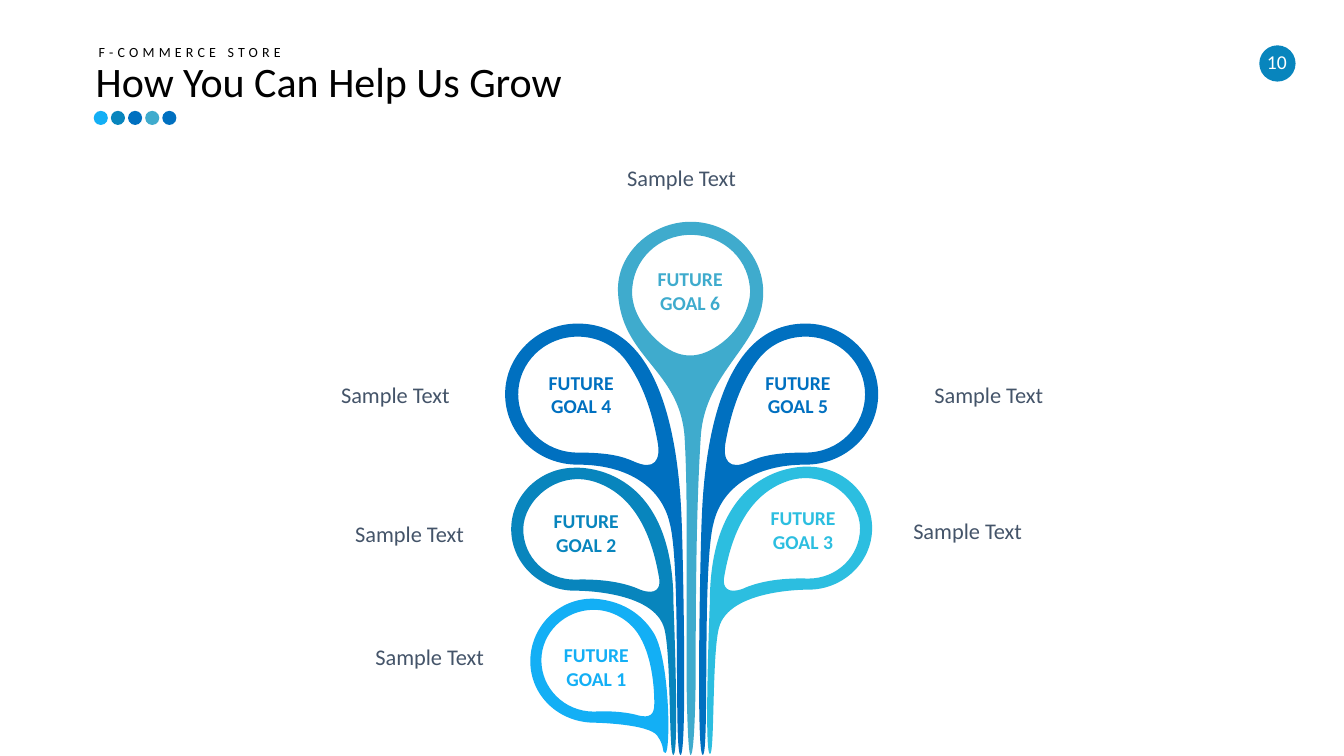
from lxml import etree
from pptx import Presentation
from pptx.dml.color import RGBColor
from pptx.enum.shapes import MSO_SHAPE as SHAPE
from pptx.enum.text import MSO_AUTO_SIZE as AUTO_SIZE, PP_ALIGN as ALIGN
from pptx.oxml.ns import qn
from pptx.util import Inches, Pt

FONT = "Calibri"
SKY = RGBColor(0x13, 0xAF, 0xF5)
TEAL = RGBColor(0x08, 0x85, 0xBD)
BLUE = RGBColor(0x00, 0x70, 0xC0)
MIST = RGBColor(0x3F, 0xAB, 0xCD)
AQUA = RGBColor(0x2C, 0xBE, 0xE0)
SLATE = RGBColor(0x44, 0x54, 0x69)
BLACK = RGBColor(0, 0, 0)
WHITE = RGBColor(0xFF, 0xFF, 0xFF)

TREE_WIDTH = 3.72

# Each leaf is a rim and a hole, in inches inside the tree box:
# a start point, then Bezier curves (two controls and an end point)
TOP_LEAF = [
    [(1.85, .2),
     (1.46, .2, 1.11, .52, 1.13, .9), (1.16, 1.55, 1.74, 1.66, 1.79, 2.33),
     (1.82, 2.83, 1.81, 3.43, 1.81, 4.7), (1.81, 4.83, 1.82, 5.49, 1.85, 5.49),
     (1.89, 5.49, 1.9, 4.83, 1.9, 4.7), (1.9, 3.45, 1.92, 2.84, 1.95, 2.34),
     (1.99, 1.67, 2.57, 1.43, 2.57, .9), (2.57, .52, 2.25, .2, 1.85, .2)],
    [(1.48, 1.34),
     (1.38, 1.24, 1.27, 1.08, 1.27, .9), (1.27, .58, 1.53, .33, 1.85, .33),
     (2.18, .33, 2.44, .58, 2.44, .9), (2.44, .98, 2.39, 1.25, 2.12, 1.43),
     (1.9, 1.58, 1.69, 1.56, 1.48, 1.34)],
]
UPPER_LEAF = [
    [(.01, 1.91),
     (.01, 2.3, .33, 2.61, .73, 2.61), (1.25, 2.61, 1.56, 2.85, 1.64, 3.18),
     (1.76, 3.61, 1.68, 5.49, 1.75, 5.49), (1.82, 5.49, 1.77, 3.32, 1.76, 3.15),
     (1.73, 2.33, 1.54, 1.21, .73, 1.21), (.33, 1.21, .01, 1.53, .01, 1.91)],
    [(.14, 1.91),
     (.14, 1.6, .4, 1.34, .73, 1.34), (.93, 1.34, 1.1, 1.43, 1.21, 1.58),
     (1.38, 1.81, 1.47, 2.1, 1.52, 2.37), (1.56, 2.57, 1.49, 2.67, 1.29, 2.58),
     (1.16, 2.52, 1.01, 2.49, .73, 2.49), (.4, 2.49, .14, 2.23, .14, 1.91)],
]
MIDDLE_LEAF = [
    [(.07, 3.25),
     (.07, 3.59, .36, 3.86, .7, 3.86), (.7, 3.86, 1.49, 3.85, 1.59, 4.24),
     (1.66, 4.52, 1.63, 5.51, 1.68, 5.49), (1.74, 5.47, 1.68, 3.99, 1.68, 3.99),
     (1.68, 2.57, .7, 2.64, .7, 2.64), (.36, 2.64, .07, 2.91, .07, 3.25)],
    [(.19, 3.25),
     (.19, 2.97, .52, 2.66, .9, 2.78), (1.33, 2.92, 1.48, 3.38, 1.54, 3.75),
     (1.55, 3.83, 1.51, 3.91, 1.35, 3.85), (1.22, 3.79, 1.01, 3.74, .7, 3.75),
     (.42, 3.75, .19, 3.53, .19, 3.25)],
]
LOWER_LEAF = [
    [(.26, 4.56),
     (.26, 4.9, .54, 5.17, .9, 5.17), (.9, 5.17, 1.44, 5.18, 1.52, 5.3),
     (1.6, 5.41, 1.56, 5.47, 1.6, 5.47), (1.65, 5.47, 1.65, 4.58, 1.49, 4.29),
     (1.4, 4.14, 1.22, 3.96, .89, 3.94), (.54, 3.93, .26, 4.22, .26, 4.56)],
    [(.37, 4.55),
     (.37, 4.28, .6, 4.05, .89, 4.05), (1.07, 4.05, 1.24, 4.15, 1.33, 4.29),
     (1.46, 4.49, 1.49, 4.79, 1.49, 4.98), (1.49, 5.1, 1.44, 5.12, 1.34, 5.1),
     (1.24, 5.07, 1.09, 5.05, .89, 5.06), (.6, 5.06, .37, 4.83, .37, 4.55)],
]

# Goal number, leaf, mirrored, vertical shift, colour, label place, caption place, caption alignment
GOALS = [
    (6, TOP_LEAF, False, 0, MIST, (1.29, .6), (.96, -.42), ALIGN.CENTER),
    (5, UPPER_LEAF, True, 0, BLUE, (2.36, 1.63), (4.17, 1.73), ALIGN.LEFT),
    (3, MIDDLE_LEAF, True, -.01, AQUA, (2.41, 2.97), (3.96, 3.08), ALIGN.LEFT),
    (4, UPPER_LEAF, False, 0, BLUE, (.21, 1.63), (-2.04, 1.73), ALIGN.RIGHT),
    (2, MIDDLE_LEAF, False, 0, TEAL, (.26, 3), (-1.9, 3.11), ALIGN.RIGHT),
    (1, LOWER_LEAF, False, 0, SKY, (.36, 4.33), (-1.7, 4.33), ALIGN.RIGHT),
]


def paint(shape, color):
    shape.shadow.inherit = False
    shape.fill.solid()
    shape.fill.fore_color.rgb = color
    shape.line.fill.background()


def add_dot(slide, left, top, size, color):
    dot = slide.shapes.add_shape(
        SHAPE.OVAL, Inches(left), Inches(top), Inches(size), Inches(size))
    paint(dot, color)


def add_text(slide, box, text, size, color, align=ALIGN.LEFT, bold=False, wrap=True):
    frame = slide.shapes.add_textbox(*map(Inches, box)).text_frame
    frame.text = text
    frame.word_wrap = wrap
    frame.auto_size = AUTO_SIZE.SHAPE_TO_FIT_TEXT
    paragraph = frame.paragraphs[0]
    paragraph.alignment = align
    run = paragraph.runs[0]
    run.font.name, run.font.size, run.font.bold = FONT, Pt(size), bold
    run.font.color.rgb = color
    return run


def add_leaf(slide, left, top, leaf, mirrored, color):
    def place(x, y):
        return Inches(left + (TREE_WIDTH - x if mirrored else x)), Inches(top + y)

    # Outline through the end points of the curves
    rim, hole = [[place(*part[-2:]) for part in contour] for contour in leaf]
    builder = slide.shapes.build_freeform(*rim[0])
    builder.add_line_segments(rim[1:], close=True)
    builder.move_to(*hole[0])
    builder.add_line_segments(hole[1:], close=True)
    shape = builder.convert_to_shape()
    paint(shape, color)

    # Bend each straight segment with its two control points
    curves = [curve for contour in leaf for curve in contour[1:]]
    segments = list(shape._element.iter(qn("a:lnTo")))
    for segment, curve in zip(segments, curves):
        segment.tag = qn("a:cubicBezTo")
        for i in range(2):
            x, y = place(*curve[2 * i:2 * i + 2])
            control = etree.Element(
                qn("a:pt"), x=str(x - shape.left), y=str(y - shape.top))
            segment.insert(i, control)


def add_page_number(slide, left, top):
    add_dot(slide, left + .04, top, .36, TEAL)
    add_text(slide, (left, top, .43, .34), "10", 14, WHITE, ALIGN.CENTER, wrap=False)


def add_header(slide, left, top):
    kicker = add_text(slide, (left + .03, top, 2.07, .27), "F-COMMERCE STORE",
                      10, BLACK, wrap=False)
    kicker.font._element.set("spc", "300")
    for i, color in enumerate((SKY, TEAL, BLUE, MIST, BLUE)):
        add_dot(slide, left + .08 + i * .17, top + .72, .14, color)
    add_text(slide, (left, top + .12, 4.92, .61), "How You Can Help Us Grow",
             30, BLACK, wrap=False)


def add_goal_tree(slide, left, top):
    # Leaves and stems
    for _, leaf, mirrored, shift, color, *_ in GOALS:
        add_leaf(slide, left, top + shift, leaf, mirrored, color)
    # Goal labels and captions
    for number, _, _, _, color, label, caption, align in GOALS:
        add_text(slide, (left + label[0], top + label[1], 1.11, .57),
                 f"FUTURE GOAL {number}", 14, color, ALIGN.CENTER, bold=True)
        add_text(slide, (left + caption[0], top + caption[1], 1.6, .37),
                 "Sample Text", 16, SLATE, align)


def main():
    deck = Presentation()
    deck.slide_width, deck.slide_height = Inches(13.33), Inches(7.5)
    slide = deck.slides.add_slide(deck.slide_layouts[6])
    add_page_number(slide, 12.45, .45)
    add_header(slide, .85, .38)
    add_goal_tree(slide, 5, 2)
    deck.save("out.pptx")


if __name__ == "__main__":
    main()
